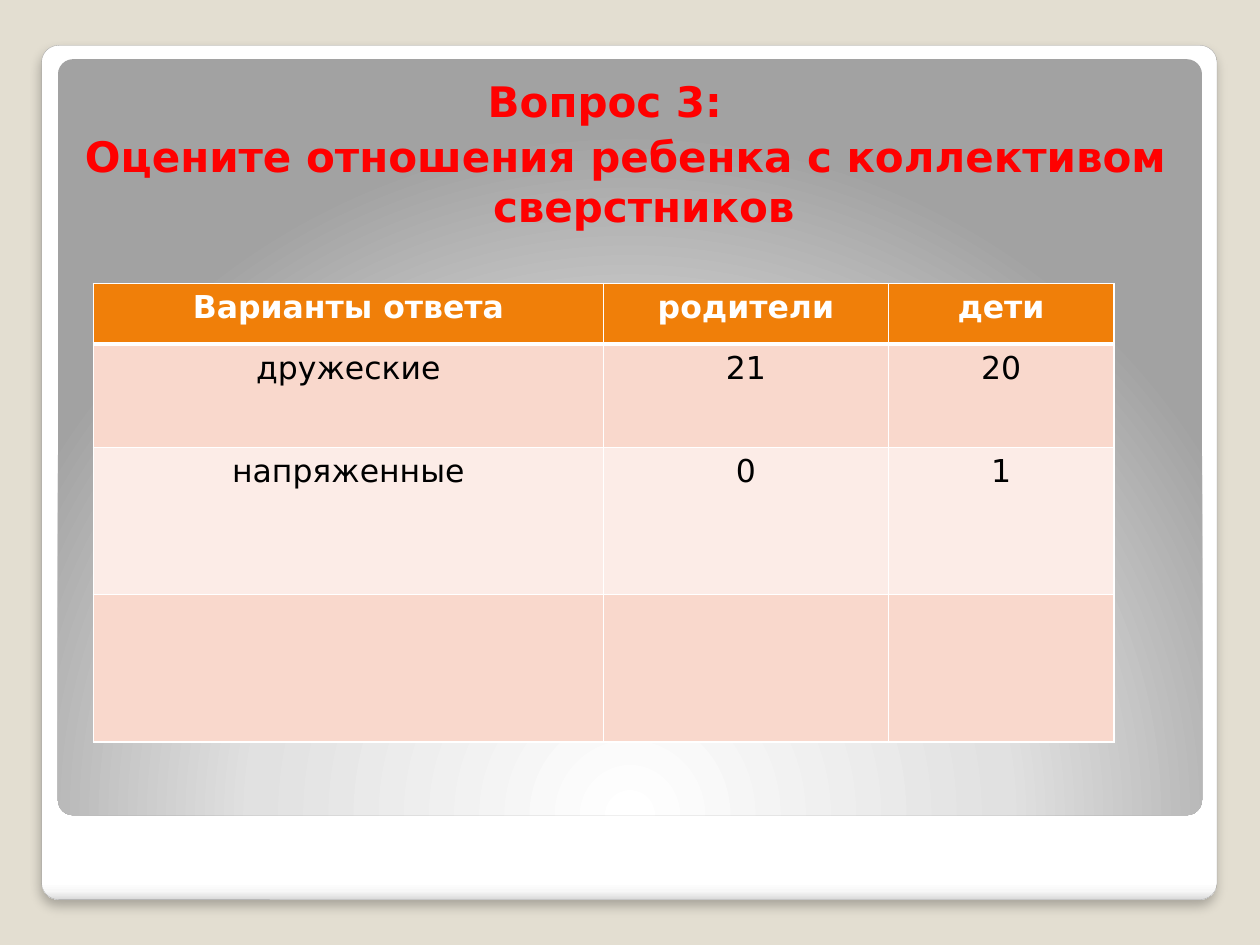
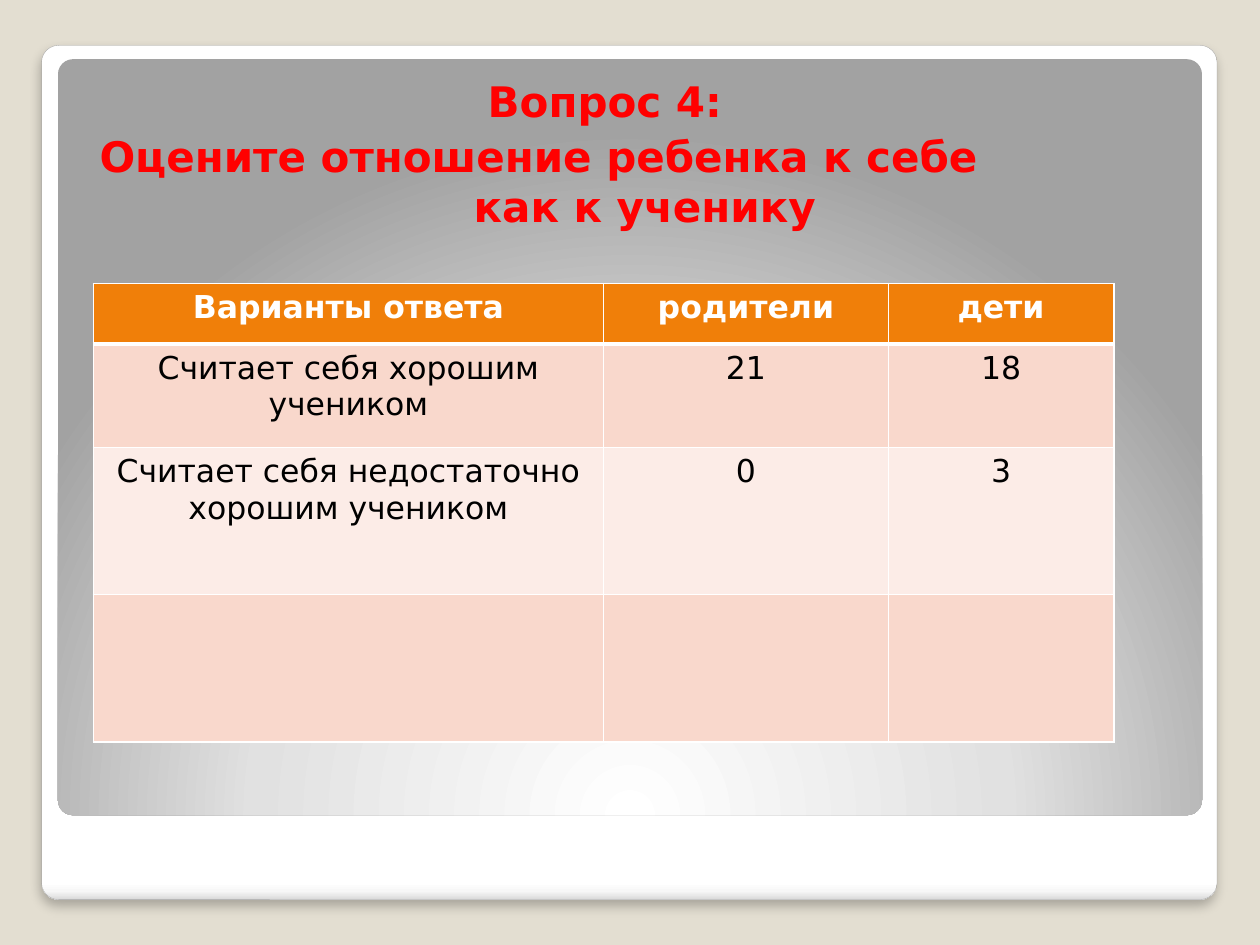
from lxml import etree
from pptx import Presentation
from pptx import util as u
from pptx.dml.color import RGBColor
from pptx.enum import shapes, text
from pptx.oxml import ns

COLORS = {
    "page": "E3DED1", "white": "FFFFFF", "frame": "A4A4A4", "shadow": "000000",
    "question": "FF0000", "header": "F07F09", "ink": "000000",
    "odd row": "F9D8CC", "even row": "FCECE7",
}
# Gradient stops: (percent, colour)
CARD_STOPS = [(0, "FFFFFF"), (98, "FFFFFF"), (99, "F7F7F7"), (100, "DADADA")]
PANEL_STOPS = [(0, "FFFFFF"), (55, "E1E1E1"), (100, "A2A2A2")]
CARD_SHADE = {"lin": {"ang": 90 * 60000, "scaled": 0}}
PANEL_GLOW = {"l": 50000, "t": 175000, "r": 50000, "b": -75000}

COLUMN_WIDTHS = [4.05, 2.26, 1.79]
ROW_HEIGHTS = [0.48, 0.82, 1.17, 1.17]
HEADER = ["Варианты ответа", "родители", "дети"]
LEFT, CENTER = text.PP_ALIGN.LEFT, text.PP_ALIGN.CENTER

# Heading paragraphs: (wording, alignment, left margin, first-line indent)
QUESTIONS = [
    {
        "heading": [
            ("Вопрос 3:", LEFT, 3.34, 0),
            ("Оцените отношения ребенка с коллективом сверстников", CENTER, 0.29, -0.29),
        ],
        "answers": [["дружеские", "21", "20"], ["напряженные", "0", "1"], ["", "", ""]],
    },
    {
        "heading": [
            ("Вопрос 4:", LEFT, 3.34, 0),
            ("Оцените отношение ребенка к себе\vкак к ученику", LEFT, 3.23, -2.97),
        ],
        "answers": [
            ["Считает себя хорошим учеником", "21", "18"],
            ["Считает себя недостаточно хорошим учеником", "0", "3"],
            ["", "", ""],
        ],
    },
]


def rgb(name):
    return RGBColor.from_string(COLORS[name])


def add_node(parent, tag, **attributes):
    node = etree.SubElement(parent, ns.qn(tag))
    for key, value in attributes.items():
        node.set(key, str(value))
    return node


class SurveyDeck:
    font = "DejaVu Sans"

    def __init__(self):
        self.prs = Presentation()
        self.prs.slide_width = u.Inches(10)
        self.prs.slide_height = u.Inches(7.5)
        background = self.prs.slide_master.background.fill
        background.solid()
        background.fore_color.rgb = rgb("page")
        self.slide = None

    def new_slide(self):
        self.slide = self.prs.slides.add_slide(self.prs.slide_layouts[1])
        title = self.slide.shapes.title.element
        title.getparent().remove(title)
        self.frame()

    def frame(self):
        """White card with a grey panel, both behind the text."""
        card = self.rounded(0, 0.33, 0.36, 9.33, 6.78)
        card.line.color.rgb = rgb("frame")
        card.line.width = u.Pt(0.16)
        gradient = self.gradient(card, CARD_STOPS)
        add_node(gradient, "a:lin", ang=90 * 60000, scaled=0)
        effects = card.element.spPr.find(ns.qn("a:effectLst"))
        shadow = add_node(effects, "a:outerShdw", blurRad=u.Pt(6), dist=u.Pt(4),
                          dir=90 * 60000, algn="t", rotWithShape=0)
        shade = add_node(shadow, "a:srgbClr", val=COLORS["shadow"])
        add_node(shade, "a:alpha", val=25000)

        panel = self.rounded(1, 0.46, 0.47, 9.08, 6)
        panel.line.fill.background()
        gradient = self.gradient(panel, PANEL_STOPS)
        glow = add_node(gradient, "a:path", path="circle")
        add_node(glow, "a:fillToRect", **PANEL_GLOW)

    def rounded(self, depth, *box):
        shape = self.slide.shapes.add_shape(
            shapes.MSO_SHAPE.ROUNDED_RECTANGLE, *map(u.Inches, box))
        shape.adjustments[0] = 0.02
        shape.shadow.inherit = False
        # The first two children of the tree are its properties
        shape.element.getparent().insert(2 + depth, shape.element)
        return shape

    def gradient(self, shape, stops):
        shape.fill.background()
        properties = shape.element.spPr
        gradient = etree.Element(ns.qn("a:gradFill"), rotWithShape="1")
        stop_list = add_node(gradient, "a:gsLst")
        for percent, color in stops:
            stop = add_node(stop_list, "a:gs", pos=percent * 1000)
            add_node(stop, "a:srgbClr", val=color)
        properties.replace(properties.find(ns.qn("a:noFill")), gradient)
        return gradient

    def run(self, paragraph, wording, size, color, bold):
        run = paragraph.add_run()
        run.text = wording
        run.font.name = self.font
        run.font.size = u.Pt(size)
        run.font.bold = bold
        run.font.color.rgb = rgb(color)

    def heading(self, paragraphs):
        body = self.slide.placeholders[1]
        body.left, body.top = u.Inches(0.33), u.Inches(0.5)
        body.width, body.height = u.Inches(9.17), u.Inches(6.42)
        frame = body.text_frame
        frame.auto_size = text.MSO_AUTO_SIZE.NONE
        frame.vertical_anchor = text.MSO_ANCHOR.TOP
        frame.margin_left, frame.margin_top = u.Inches(0.2), u.Inches(0.1)
        frame.margin_right, frame.margin_bottom = u.Inches(0.1), u.Inches(0.05)
        for number, (wording, alignment, margin, indent) in enumerate(paragraphs):
            paragraph = frame.add_paragraph() if number else frame.paragraphs[0]
            paragraph.alignment = alignment
            paragraph.space_before = u.Pt(2.5)
            properties = paragraph._p.get_or_add_pPr()
            properties.set("marL", str(u.Inches(margin)))
            properties.set("indent", str(u.Inches(indent)))
            add_node(properties, "a:buNone")
            for part, line in enumerate(wording.split("\v")):
                if part:
                    paragraph.add_line_break()
                self.run(paragraph, line, 24, "question", True)

    def answer_table(self, answers):
        rows = [HEADER] + answers
        table = self.slide.shapes.add_table(
            len(rows), len(HEADER), u.Inches(0.74), u.Inches(2.25),
            u.Inches(sum(COLUMN_WIDTHS)), u.Inches(sum(ROW_HEIGHTS))).table
        table.horz_banding = False
        for column, width in zip(table.columns, COLUMN_WIDTHS):
            column.width = u.Inches(width)
        for row, height in zip(table.rows, ROW_HEIGHTS):
            row.height = u.Inches(height)
        for r, row in enumerate(rows):
            for c, wording in enumerate(row):
                self.cell(table.cell(r, c), r, wording)

    def cell(self, cell, row, wording):
        is_header = row == 0
        cell.fill.solid()
        cell.fill.fore_color.rgb = rgb(
            "header" if is_header else "odd row" if row % 2 else "even row")
        # A thick rule parts the header from the answers
        widths = {"L": 1, "R": 1, "T": 3 if row == 1 else 1, "B": 3 if is_header else 1}
        properties = cell._tc.get_or_add_tcPr()
        for place, (side, width) in enumerate(widths.items()):
            border = etree.Element(ns.qn("a:ln" + side), w=str(u.Pt(width)))
            add_node(add_node(border, "a:solidFill"), "a:srgbClr", val=COLORS["white"])
            properties.insert(place, border)
        if wording:
            paragraph = cell.text_frame.paragraphs[0]
            paragraph.alignment = CENTER
            self.run(paragraph, wording, 18, "white" if is_header else "ink", is_header)


def main():
    deck = SurveyDeck()
    for question in QUESTIONS:
        deck.new_slide()
        deck.heading(question["heading"])
        deck.answer_table(question["answers"])
    deck.prs.save("out.pptx")


if __name__ == "__main__":
    main()
